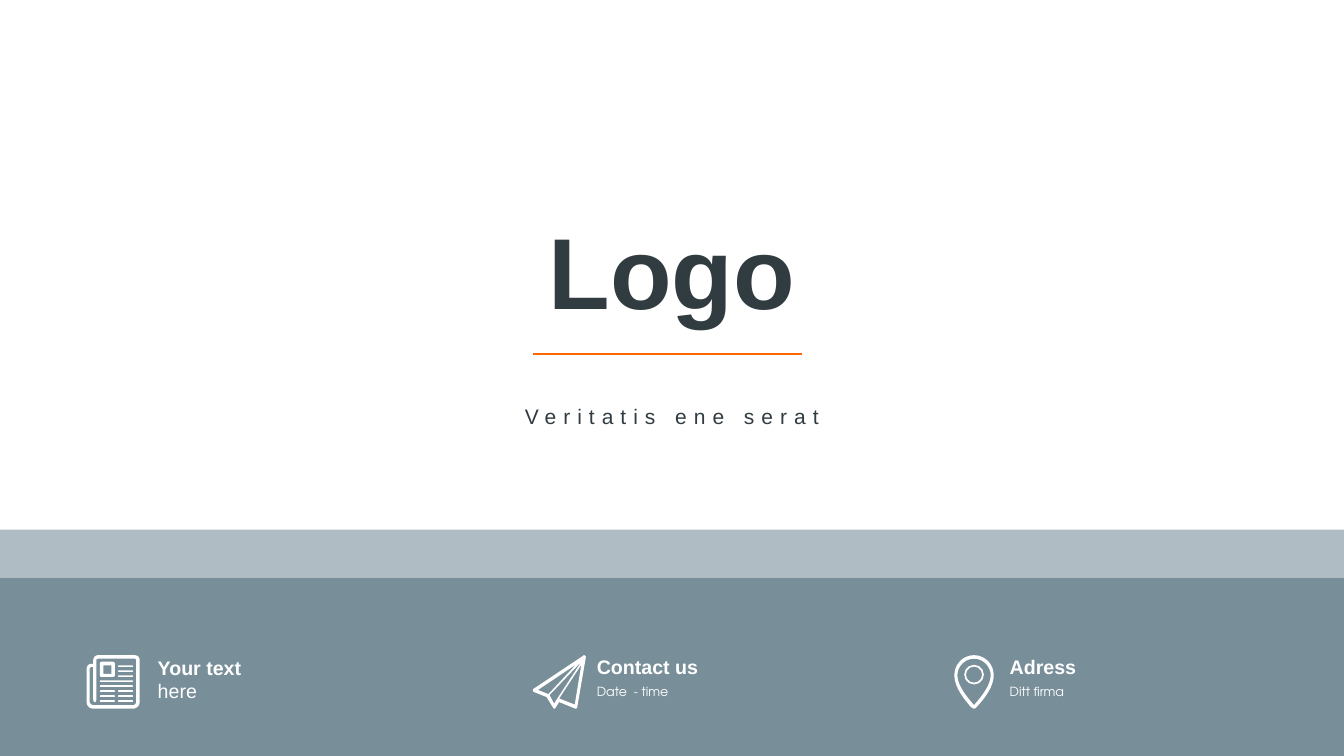
"""Build a cover slide with a title, a tagline and a footer of three contact items."""
from lxml.etree import SubElement
from pptx import Presentation
from pptx.dml.color import RGBColor
from pptx.enum.shapes import MSO_CONNECTOR, MSO_SHAPE
from pptx.enum.text import MSO_ANCHOR, MSO_AUTO_SIZE, PP_ALIGN
from pptx.oxml.ns import qn
from pptx.util import Inches, Pt

COLORS = {"ink": "313C41", "slate": "788E99", "accent": "FF6800", "white": "FFFFFF"}
HEADING_FONT, DETAIL_FONT = "Arial", "TeX Gyre Adventor"

presentation = Presentation()
presentation.slide_width, presentation.slide_height = Inches(26.66), Inches(15)
slide = presentation.slides.add_slide(presentation.slide_layouts[6])
column, row = presentation.slide_width / 100, presentation.slide_height / 100
icon_unit = Inches(0.01)
icon_top = int(86.67 * row)


def add_text(shapes, box, lines, size, color, font=HEADING_FONT, spacing=1.0, wrap=True):
    """Place (text, bold) lines in a box measured in columns and rows."""
    left, top, width, height = box
    text_box = shapes.add_textbox(int(left * column), int(top * row),
                                  int(width * column), int(height * row))
    frame = text_box.text_frame
    frame.word_wrap = wrap
    frame.auto_size = MSO_AUTO_SIZE.SHAPE_TO_FIT_TEXT
    frame.text = "\n".join(text for text, bold in lines)
    for paragraph, (text, bold) in zip(frame.paragraphs, lines):
        paragraph.line_spacing = spacing
        run_font = paragraph.runs[0].font
        run_font.name, run_font.size, run_font.bold = font, Pt(size), bold
        run_font.color.rgb = RGBColor.from_string(COLORS[color])
    return frame


def add_outline(shapes, left, contours):
    """Draw contours of points and cubic curves, in icon units from the icon's corner."""
    builder = None
    for start, *segments in contours:
        points, (x, y) = [], start
        for segment in segments:
            if len(segment) == 2:
                points.append(segment)
            else:
                x1, y1, x2, y2, x3, y3 = segment
                for step in range(1, 13):
                    t = step / 12
                    u = 1 - t
                    points.append((
                        u**3 * x + 3 * u * u * t * x1 + 3 * u * t * t * x2 + t**3 * x3,
                        u**3 * y + 3 * u * u * t * y1 + 3 * u * t * t * y2 + t**3 * y3))
            x, y = segment[-2:]
        if builder is None:
            builder = shapes.build_freeform(start[0] * 100, start[1] * 100, icon_unit / 100)
        else:
            builder.move_to(start[0] * 100, start[1] * 100)
        builder.add_line_segments([(px * 100, py * 100) for px, py in points], close=True)
    return builder.convert_to_shape(left, icon_top)


title = add_text(slide.shapes, (12.5, 16.27, 75, 27.93), [("Logo", True)], 144, "ink", spacing=0.9)
title.auto_size = MSO_AUTO_SIZE.NONE
title.vertical_anchor = MSO_ANCHOR.BOTTOM
title.paragraphs[0].alignment = PP_ALIGN.CENTER

for top, height, opacity in ((76.4, 23.6, 100), (70.07, 6.33, 59)):
    band = slide.shapes.add_shape(MSO_SHAPE.RECTANGLE, 0, int(top * row),
                                  presentation.slide_width, int(height * row))
    band.shadow.inherit = False
    band.line.fill.background()
    band.fill.solid()
    band.fill.fore_color.rgb = RGBColor.from_string(COLORS["slate"])
    if opacity < 100:
        fill_color = band._element.spPr.find(qn("a:solidFill"))[0]
        SubElement(fill_color, qn("a:alpha")).set("val", str(opacity * 1000))

rule = slide.shapes.add_connector(MSO_CONNECTOR.STRAIGHT, int(39.65 * column), int(46.8 * row),
                                  int(59.64 * column), int(46.8 * row))
rule.line.color.rgb = RGBColor.from_string(COLORS["accent"])
rule.line.width = Pt(3)
SubElement(rule._element.spPr, qn("a:effectLst"))

plane = add_outline(slide.shapes, int(39.65 * column), [
    [(103, 1), (103, 0, 102, 0, 101, 0), (101, 0, 100, 0, 100, 1), (1, 67),
     (0, 67, 0, 69, 0, 70), (0, 71, 0, 72, 2, 73), (27, 83), (40, 104),
     (40, 105, 41, 106, 42, 106), (43, 106, 45, 105, 45, 104), (52, 93), (84, 106),
     (86, 106, 88, 105, 88, 103), (105, 4), (105, 3, 105, 2, 103, 1)],
    [(10, 69), (86, 18), (31, 77), (30, 77)],
    [(33, 79), (96, 13), (42, 96)],
    [(83, 98), (55, 87), (54, 86, 53, 86, 52, 86), (96, 19)],
])

newspaper = slide.shapes.add_group_shape()
newspaper_left = int(6.45 * column)
add_outline(newspaper.shapes, newspaper_left, [
    [(95, 0), (23, 0), (17, 0, 13, 4, 13, 10), (13, 17), (10, 17), (4, 17, 0, 21, 0, 27),
     (0, 93), (0, 100, 5, 106, 13, 106), (92, 106), (99, 106, 105, 100, 105, 93),
     (105, 10), (105, 4, 101, 0, 95, 0)],
    [(98, 93), (98, 96, 95, 99, 92, 99), (13, 99), (10, 99, 6, 96, 6, 93), (6, 27),
     (6, 25, 8, 23, 10, 23), (13, 23), (13, 89), (13, 91, 15, 93, 16, 93),
     (18, 93, 19, 91, 19, 89), (19, 10), (19, 8, 21, 7, 23, 7), (95, 7), (97, 7, 98, 8, 98, 10)],
])
add_outline(newspaper.shapes, newspaper_left, [
    [(29, 43), (52, 43), (54, 43, 56, 42, 56, 40), (56, 17), (56, 15, 54, 13, 52, 13),
     (29, 13), (28, 13, 26, 15, 26, 17), (26, 40), (26, 42, 28, 43, 29, 43)],
    [(33, 20), (49, 20), (49, 37), (33, 37)],
])
text_lines = [(62, line, 30) for line in (0, 1, 2, 5, 6, 7)]
text_lines += [(26, line, 30) for line in (5, 6, 7)]
text_lines += [(26, line, 66) for line in (3, 4)]
for left, line, width in text_lines:
    text_line = newspaper.shapes.add_shape(
        MSO_SHAPE.ROUNDED_RECTANGLE, newspaper_left + left * icon_unit,
        icon_top + int((20 + 9.9 * line) * icon_unit), width * icon_unit, int(3.3 * icon_unit))
    text_line.adjustments[0] = 0.5

pin = slide.shapes.add_group_shape()
pin_left = int(71.01 * column)
ring = pin.shapes.add_shape(MSO_SHAPE.DONUT, pin_left + int(19.5 * icon_unit),
                            icon_top + 19 * icon_unit, 39 * icon_unit, 39 * icon_unit)
ring.adjustments[0] = 0.09
add_outline(pin.shapes, pin_left, [
    [(39, 0), (18, 0, 0, 17, 0, 40), (0, 63, 19, 87, 33, 103), (34, 103, 36, 106, 39, 106),
     (42, 106, 44, 103, 44, 103), (59, 87, 78, 63, 78, 40), (78, 17, 60, 0, 39, 0)],
    [(39, 99), (38, 98), (27, 85, 6, 61, 6, 40), (6, 22, 21, 7, 39, 7),
     (57, 7, 72, 22, 72, 40), (72, 61, 51, 85, 39, 99)],
])

for shape in [plane, *newspaper.shapes, *pin.shapes]:
    shape.shadow.inherit = False
    shape.line.fill.background()
    shape.fill.solid()
    shape.fill.fore_color.rgb = RGBColor.from_string(COLORS["white"])

add_text(slide.shapes, (11.37, 86.4, 7.46, 6.93), [("Your text", True), ("here", False)],
         28, "white", wrap=False)

address = slide.shapes.add_group_shape()
for shapes, left, width, heading, detail in (
    (slide.shapes, 44.04, 8.4, "Contact us", "Date  - time"),
    (address.shapes, 74.76, 5.78, "Adress", "Ditt firma"),
):
    add_text(shapes, (left, 89.13, 18, 3.4), [(detail, False)], 18, "white", DETAIL_FONT, 1.5)
    add_text(shapes, (left, 86.27, width, 3.8), [(heading, True)], 28, "white", wrap=False)

tagline = add_text(slide.shapes, (0, 51.4, 100, 5.07), [("Veritatis ene serat", False)],
                   30, "ink", spacing=1.5)
tagline.paragraphs[0].alignment = PP_ALIGN.CENTER
tagline.paragraphs[0].runs[0]._r.get_or_add_rPr().set("spc", "1000")

presentation.save("out.pptx")
